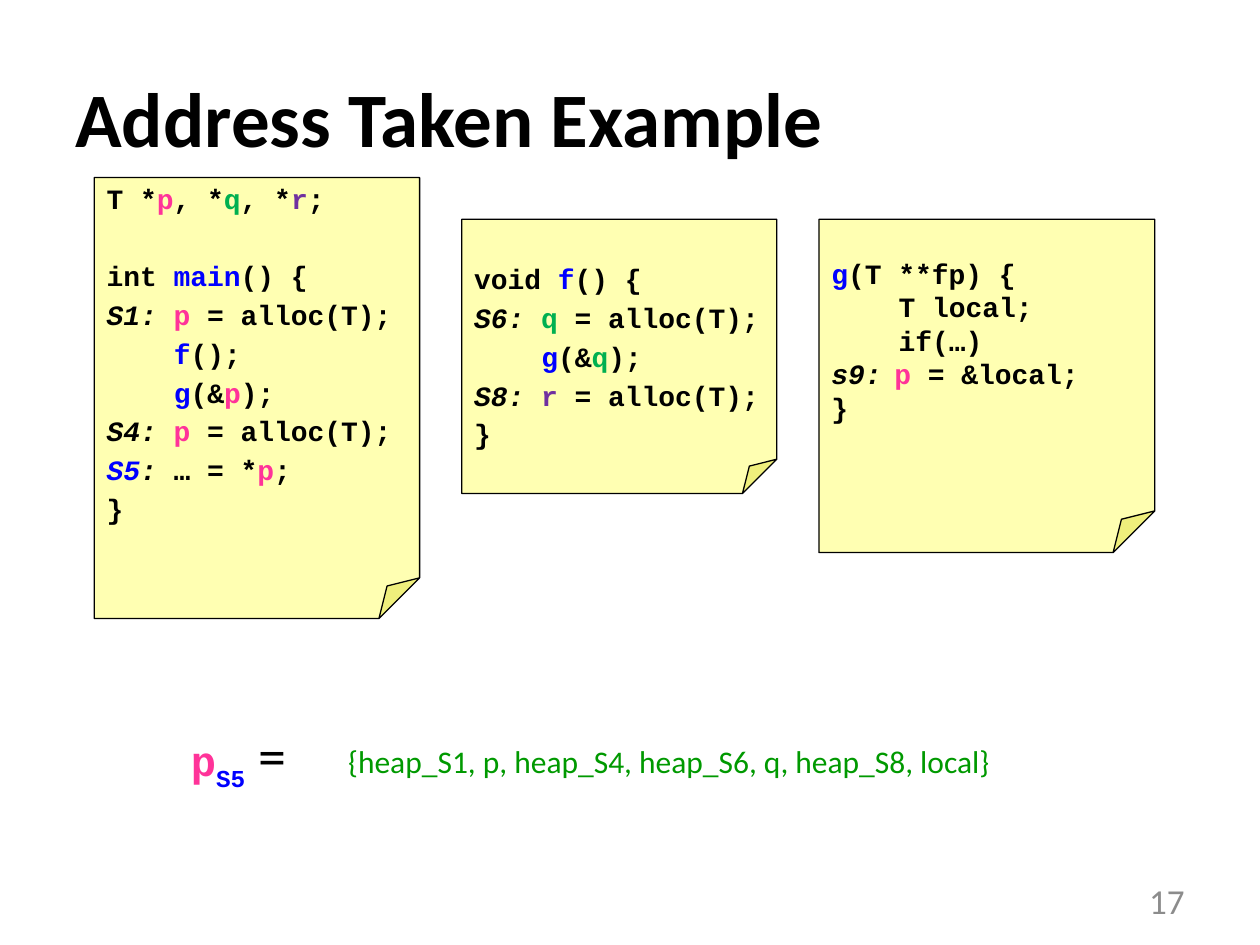
from dataclasses import dataclass

from lxml import etree
from pptx import Presentation
from pptx.dml.color import RGBColor
from pptx.enum import shapes, text
from pptx.oxml import ns
from pptx.util import Cm, Pt


@dataclass(frozen=True)
class Theme:
    sans: str = "Calibri"
    mono: str = "Courier New"
    black: str = "000000"
    blue: str = "0000FF"
    pink: str = "FF3399"
    green: str = "00B050"
    purple: str = "7030A0"
    result: str = "009900"
    gray: str = "8C8C8C"
    note: str = "FFFF00"
    title: int = 44
    equal: int = 32
    name: int = 24
    page: int = 20
    answer: int = 18
    code: int = 16


T = Theme()
HUES = {"p": T.pink, "q": T.green, "r": T.purple,
        "main": T.blue, "f": T.blue, "g": T.blue, "S5": T.blue}
COL = 9.6   # width of one code character, points
ROW = 19    # height of one code line, points

# Code rows: label, indent in characters, code; names in backticks get their hue
MAIN = [
    ("", 0, "T *`p`, *`q`, *`r`;"),
    ("", 0, "int `main`() {"),
    ("S1: ", 0, "`p` = alloc(T);"),
    ("", 4, "`f`();"),
    ("", 4, "`g`(&`p`);"),
    ("S4: ", 0, "`p` = alloc(T);"),
    ("`S5`: ", 0, "… = *`p`;"),
    ("", 0, "}"),
]
FUN_F = [
    ("", 0, "void `f`() {"),
    ("S6: ", 0, "`q` = alloc(T);"),
    ("", 4, "`g`(&`q`);"),
    ("S8: ", 0, "`r` = alloc(T);"),
    ("", 0, "}"),
]
FUN_G = [
    ("", 0, "`g`(T **fp) {"),
    ("", 4, "T local;"),
    ("", 4, "if(…)"),
    ("s9:\t", 0, "`p` = &local;"),
    ("", 0, "}"),
]


def style(font, size=None, color=None, face=None, bold=None):
    if size:
        font.size = Pt(size)
    if color:
        font.color.rgb = RGBColor.from_string(color)
    if face:
        font.name = face
    if bold is not None:
        font.bold = bold


def add_box(parent, area, anchor=text.MSO_ANCHOR.TOP):
    box = parent.add_textbox(*(Cm(v) for v in area))
    frame = box.text_frame
    frame.word_wrap = True
    frame.vertical_anchor = anchor
    return frame


def add_label(parent, area, words, size, color, bold=False,
              anchor=text.MSO_ANCHOR.TOP, align=text.PP_ALIGN.LEFT):
    para = add_box(parent, area, anchor).paragraphs[0]
    para.alignment = align
    style(para.font, size, color, T.sans, bold)
    para.add_run().text = words


def add_runs(para, words, slant):
    for i, part in enumerate(words.split("`")):
        if part:
            run = para.add_run()
            run.text = part
            style(run.font, color=HUES[part] if i % 2 else T.black)
            run.font.italic = slant


def add_row(para, row, before):
    label, indent, code = row
    para.space_before = Pt(before)
    props = para._p.get_or_add_pPr()
    props.set("marL", str(Pt(indent * COL)))
    props.set("indent", "0")
    if "\t" in label:
        tabs = etree.SubElement(props, ns.qn("a:tabLst"))
        etree.SubElement(tabs, ns.qn("a:tab"), pos=str(Pt(7 * COL)), algn="l")
    style(para.font, T.code, T.black, T.mono, True)
    add_runs(para, label, True)
    add_runs(para, code, False)


def add_note(slide, area, rows, before=0, head=0, gap=None):
    """Folded note with code; head is space on top, gap the row set apart."""
    group = slide.shapes.add_group_shape().shapes
    note = group.add_shape(shapes.MSO_SHAPE.FOLDED_CORNER,
                           *(Cm(v) for v in area))
    guides = note._element.spPr.find(".//" + ns.qn("a:avLst"))
    etree.SubElement(guides, ns.qn("a:gd"), name="adj", fmla="val 12500")
    note.shadow.inherit = False
    note.fill.solid()
    note.fill.fore_color.rgb = RGBColor.from_string(T.note)
    shade = note._element.spPr.find(".//" + ns.qn("a:srgbClr"))
    etree.SubElement(shade, ns.qn("a:alpha"), val="30000")
    note.line.color.rgb = RGBColor.from_string(T.black)
    note.line.width = Pt(0.75)

    left, top, width, height = area
    frame = add_box(group, (left, top - 0.05, width, height))
    frame.margin_top = Pt(3.6 + head)
    for i, row in enumerate(rows):
        para = frame.add_paragraph() if i else frame.paragraphs[0]
        extra = ROW + before if i == gap else 0
        add_row(para, row, before + extra)


def add_term(slide):
    para = add_box(slide.shapes, (3.6, 14.4, 20.52, 2.54)).paragraphs[0]
    style(para.font, T.name, face=T.mono, bold=True)
    name, sub, sign = (para.add_run() for _ in range(3))
    name.text, sub.text, sign.text = "p", "S5", " ="
    style(name.font, color=T.pink)
    style(sub.font, color=T.blue)
    sub.font._element.set("baseline", "-25000")
    style(sign.font, T.equal, T.black, T.sans, False)


def main():
    deck = Presentation()
    deck.slide_width, deck.slide_height = Cm(25.4), Cm(19.05)
    slide = deck.slides.add_slide(deck.slide_layouts[6])
    middle = text.MSO_ANCHOR.MIDDLE

    # Title
    add_label(slide.shapes, (1.27, 0.76, 22.86, 3.18), "Address Taken Example",
              T.title, T.black, True, middle)

    # Code notes
    add_note(slide, (1.9, 3.58, 6.56, 8.89), MAIN, before=3, gap=1)
    add_note(slide, (9.31, 4.42, 6.35, 5.53), FUN_F, before=3, head=ROW + 3)
    add_note(slide, (16.51, 4.42, 6.77, 6.72), FUN_G, head=ROW)

    # Points-to set
    add_term(slide)
    add_label(slide.shapes, (6.77, 14.83, 14.6, 1.02),
              "{heap_S1, p, heap_S4, heap_S6, q, heap_S8, local}",
              T.answer, T.result)

    # Page number
    add_label(slide.shapes, (18.2, 17.65, 5.93, 1.02), "17", T.page, T.gray,
              anchor=middle, align=text.PP_ALIGN.RIGHT)
    deck.save("out.pptx")


if __name__ == "__main__":
    main()
